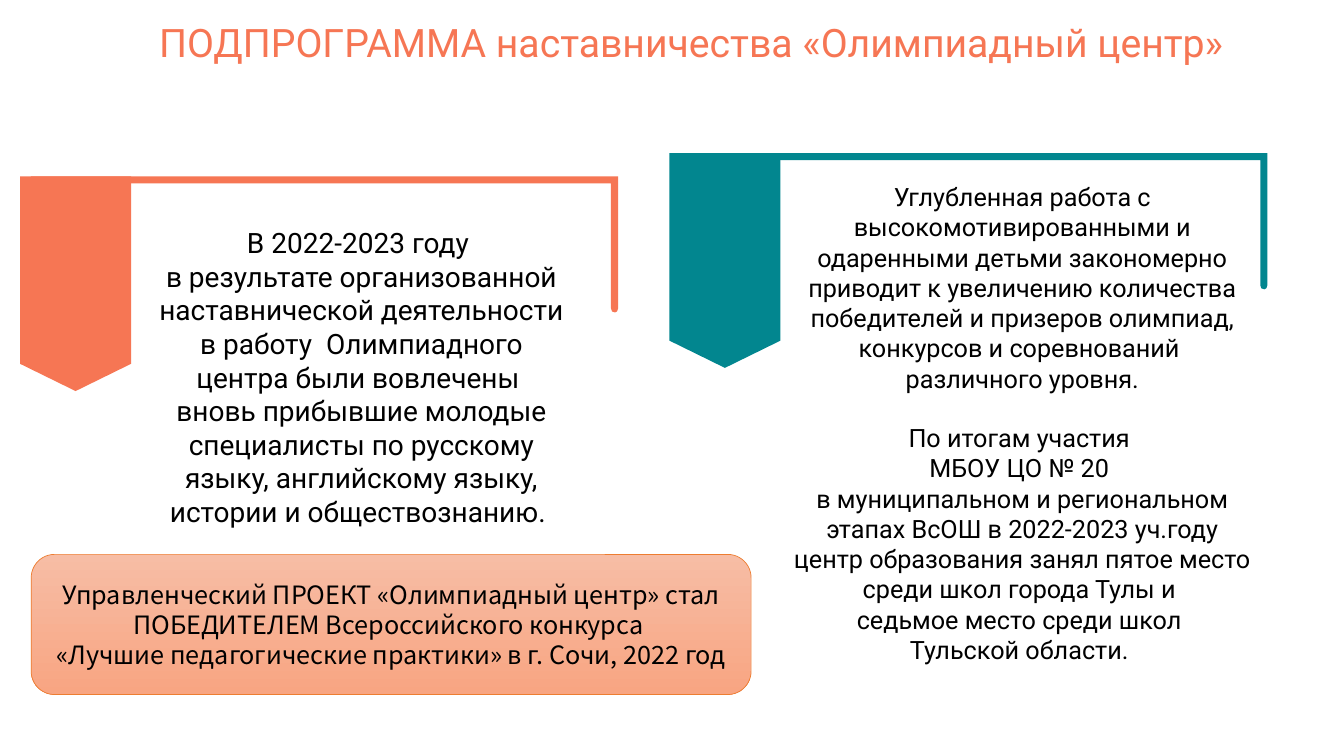
import pptx
import pptx.dml.color
import pptx.enum.shapes
import pptx.enum.text
import pptx.util
from pptx.util import Inches

BLACK, CORAL, TEAL = "000000", "F67654", "02868F"

# Each text: box (left, top, width, height), format, paragraphs
TITLE = ((0.62, 0.13, 12.47, 1.04), {"size": 28, "name": "Roboto", "color": CORAL},
         ["ПОДПРОГРАММА наставничества «Олимпиадный центр»"])
MENTORING = ((1.44, 2.19, 4.29, 3.13), {"size": 20, "name": "Roboto", "color": BLACK}, [
    "В 2022-2023 году ",
    "в результате организованной наставнической деятельности "
    "в работу  Олимпиадного центра были вовлечены ",
    "вновь прибывшие молодые специалисты по русскому языку, "
    "английскому языку, истории и обществознанию. ",
])
RESULTS_START = "По итогам участия "
RESULTS = ((7.72, 1.75, 4.84, 4.95), {"size": 18, "name": "Roboto", "color": BLACK}, [
    "Углубленная работа с высокомотивированными и одаренными детьми "
    "закономерно приводит к увеличению количества победителей и призеров "
    "олимпиад, конкурсов и соревнований ",
    "различного уровня.",
    RESULTS_START,
    "МБОУ ЦО № 20 ",
    "в муниципальном и региональном этапах ВсОШ в 2022-2023 уч.году",
    "центр образования занял пятое место среди школ города Тулы и ",
    "седьмое место среди школ ",
    "Тульской области. ",
])
AWARD = ((0.31, 5.5, 7.14, 1.39), {"size": 18, "name": "Noto Sans CJK SC", "color": BLACK}, [
    "Управленческий ПРОЕКТ «Олимпиадный центр» стал ПОБЕДИТЕЛЕМ "
    "Всероссийского конкурса ",
    "«Лучшие педагогические практики» в г. Сочи, 2022 год",
])
AWARD_STOPS = ("F7BDA5", "F8A582")
AWARD_LINE = "ED7D31"

# Left, top and colour of each ribbon with its frame
RIBBONS = [(0.2, 1.75, CORAL), (6.64, 1.52, TEAL)]
FRAME = [(0.11, 0), (5.93, 0), (5.93, 1.31), (5.92, 1.34), (5.9, 1.35), (5.87, 1.34),
         (5.86, 1.31), (5.86, 0.07), (0.11, 0.07), (0.08, 0.03)]
PENNANT = [(0, 0), (1.1, 0), (1.1, 1.86), (0.55, 2.13), (0, 1.86)]


def rgb(value):
    return pptx.dml.color.RGBColor.from_string(value)


def write(frame, style, lines):
    frame.word_wrap = True
    for index, line in enumerate(lines):
        para = frame.paragraphs[0] if index == 0 else frame.add_paragraph()
        para.alignment = pptx.enum.text.PP_ALIGN.CENTER
        if line == RESULTS_START:
            para.space_before = pptx.util.Pt(21)
        span = para.add_run()
        span.text = line
        span.font.color.rgb = rgb(style["color"])
        values = {"size": pptx.util.Pt(style["size"]), "name": style["name"]}
        for key, value in values.items():
            setattr(span.font, key, value)


def add_outline(page, left, top, points, color):
    corners = [(Inches(left + x), Inches(top + y)) for x, y in points]
    builder = page.shapes.build_freeform(*corners[0], scale=1.0)
    builder.add_line_segments(corners[1:], close=True)
    shape = builder.convert_to_shape()
    shape.shadow.inherit = False
    shape.fill.solid()
    shape.fill.fore_color.rgb = rgb(color)
    shape.line.fill.background()


def add_award(page):
    box, style, lines = AWARD
    kind = pptx.enum.shapes.MSO_SHAPE.ROUNDED_RECTANGLE
    plate = page.shapes.add_shape(kind, *map(Inches, box))
    plate.shadow.inherit = False
    plate.fill.gradient()
    plate.fill.gradient_angle = 270
    for stop, color in zip(plate.fill.gradient_stops, AWARD_STOPS):
        stop.color.rgb = rgb(color)
    plate.line.color.rgb = rgb(AWARD_LINE)
    plate.line.width = pptx.util.Pt(0.5)
    plate.text_frame.vertical_anchor = pptx.enum.text.MSO_ANCHOR.MIDDLE
    write(plate.text_frame, style, lines)


def main():
    deck = pptx.Presentation()
    deck.slide_width, deck.slide_height = Inches(13.33), Inches(7.5)
    page = deck.slides.add_slide(deck.slide_layouts[6])
    for box, style, lines in (TITLE, MENTORING, RESULTS):
        write(page.shapes.add_textbox(*map(Inches, box)).text_frame, style, lines)
    for left, top, color in RIBBONS:
        for points in (FRAME, PENNANT):
            add_outline(page, left, top, points, color)
    add_award(page)
    deck.save("out.pptx")


if __name__ == "__main__":
    main()
